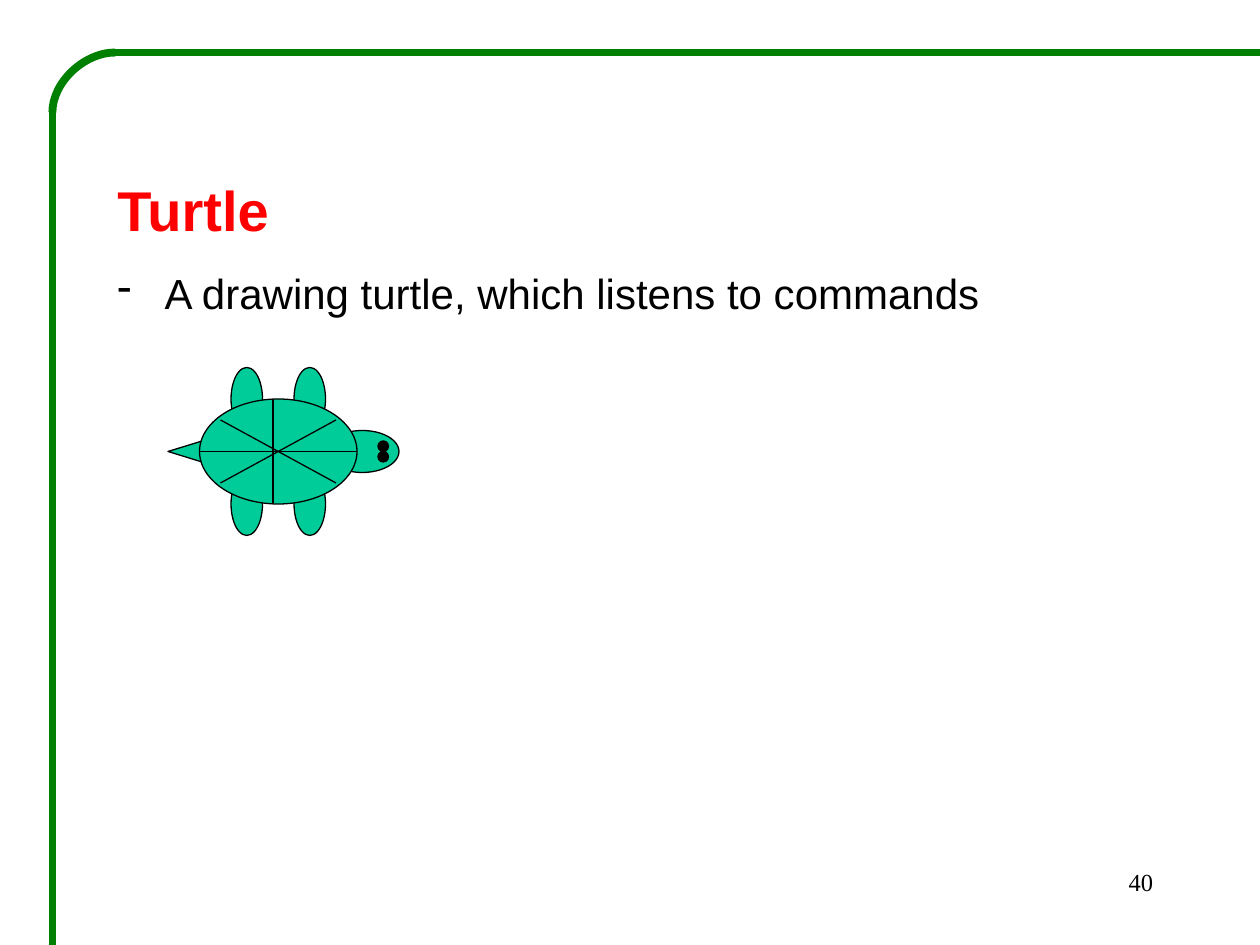
"""Build a slide with a corner frame, a heading and a turtle drawn from simple shapes."""
from lxml.etree import SubElement
from pptx import Presentation
from pptx.dml.color import RGBColor
from pptx.enum.shapes import MSO_CONNECTOR as LINK, MSO_SHAPE as SHAPE
from pptx.enum.text import MSO_ANCHOR as ANCHOR, PP_ALIGN as ALIGN
from pptx.oxml.ns import qn
from pptx.util import Pt

PX = 914400 // 120
GREEN, SKIN, BLACK, RED = "008000", "00CC99", "000000", "FF0000"


def color(value):
    return RGBColor.from_string(value)


def add_line(page, kind, ends, stroke, width):
    line = page.shapes.add_connector(kind, *(value * PX for value in ends))
    line.line.color.rgb = color(stroke)
    line.line.width = Pt(width)
    SubElement(line._element.spPr, qn("a:effectLst"))
    return line


deck = Presentation()
deck.slide_width, deck.slide_height = 1200 * PX, 900 * PX
page = deck.slides.add_slide(deck.slide_layouts[6])

heading = {"size": Pt(32), "name": "Arial", "bold": True}
body = {"size": Pt(24), "name": "Arial", "bold": False}
number = {"size": Pt(14), "name": "Times New Roman", "bold": False}
boxes = [
    ((100, 160, 1030, 150), ANCHOR.MIDDLE, ALIGN.LEFT, [
        ("Turtle", heading, RED, False),
        ("A drawing turtle, which listens to commands", body, BLACK, True),
    ]),
    ((860, 820, 250, 60), ANCHOR.TOP, ALIGN.RIGHT, [("40", number, BLACK, False)]),
]
for place, anchor, align, lines in boxes:
    frame = page.shapes.add_textbox(*(value * PX for value in place)).text_frame
    frame.word_wrap = True
    frame.vertical_anchor = anchor
    for index, (text, font, ink, bulleted) in enumerate(lines):
        para = frame.add_paragraph() if index else frame.paragraphs[0]
        para.alignment = align
        span = para.add_run()
        span.text = text
        span.font.color.rgb = color(ink)
        for name, value in font.items():
            setattr(span.font, name, value)
        if bulleted:
            para.space_before = Pt(14)
            props = para._p.get_or_add_pPr()
            props.set("marL", str(45 * PX))
            props.set("indent", str(-45 * PX))
            SubElement(props, qn("a:buChar")).set("char", "-")

add_line(page, LINK.STRAIGHT, (1200, 50, 110, 50), GREEN, 4.5)
add_line(page, LINK.STRAIGHT, (50, 100, 50, 900), GREEN, 4.5)
corner = add_line(page, LINK.CURVE, (110, 50, 50, 107), GREEN, 4.5)
corner._element.spPr.find(qn("a:prstGeom")).set("prst", "curvedConnector2")

head = (SHAPE.OVAL, (310, 410, 70, 40), SKIN)
eyes = [(SHAPE.OVAL, (360, top, 10, 10), BLACK) for top in (420, 430)]
legs = [(SHAPE.OVAL, (left, top, 30, 60), SKIN) for top in (350, 450) for left in (220, 280)]
tail = (SHAPE.LEFT_ARROW, (160, 420, 130, 20), SKIN)
shell = (SHAPE.OVAL, (190, 380, 150, 100), SKIN)
for kind, place, fill in [head, *eyes, *legs, tail, shell]:
    part = page.shapes.add_shape(kind, *(value * PX for value in place))
    part.shadow.inherit = False
    part.fill.solid()
    part.fill.fore_color.rgb = color(fill)
    part.line.color.rgb = color(BLACK)
    part.line.width = Pt(0.75)
    if kind == SHAPE.LEFT_ARROW:
        part.adjustments[1] = 1.625

for ends in [(190, 430, 340, 430), (210, 460, 320, 400), (210, 400, 320, 460), (260, 380, 260, 480)]:
    add_line(page, LINK.STRAIGHT, ends, BLACK, 0.75)

deck.save("out.pptx")
